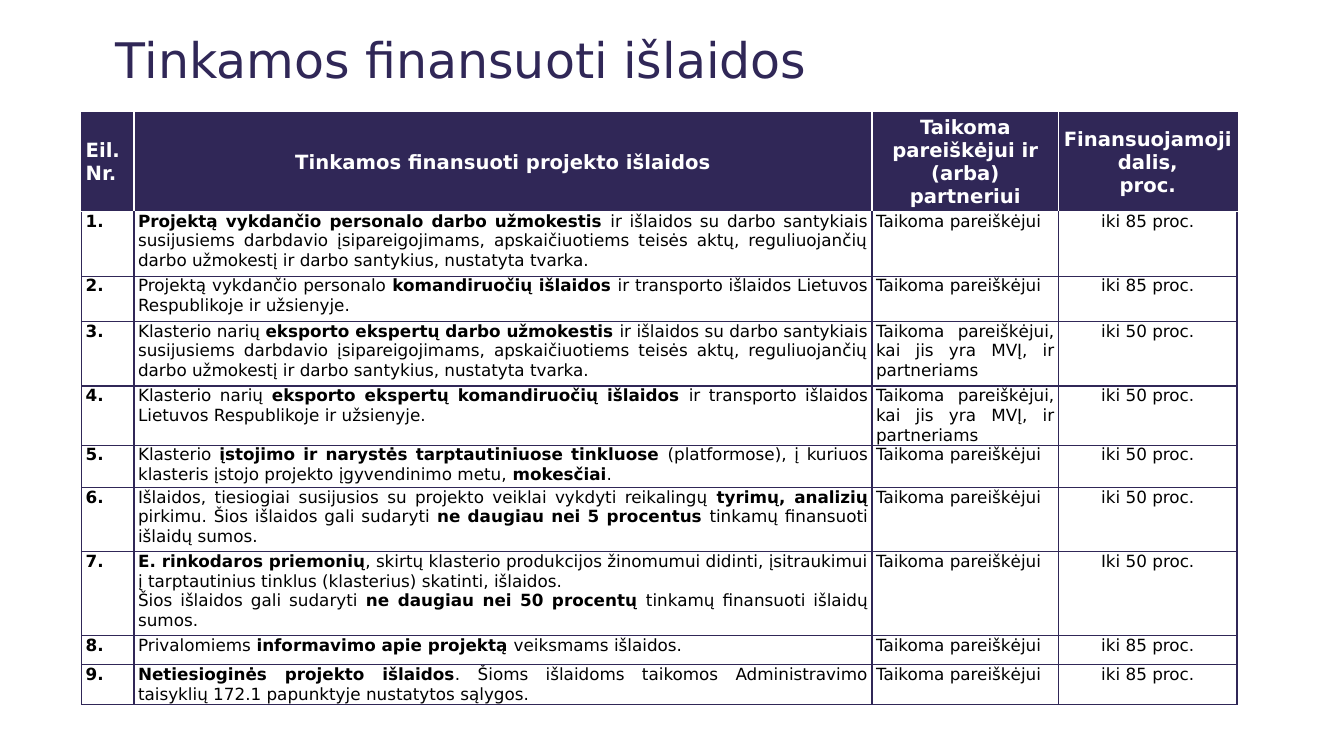
import pptx
import pptx.dml.color
import pptx.enum.text
import pptx.oxml
import pptx.oxml.ns
import pptx.util
from pptx.util import Inches

ALIGN = pptx.enum.text.PP_ALIGN
ANCHOR = pptx.enum.text.MSO_ANCHOR
NAVY, WHITE, BLACK = "302757", "FFFFFF", "000000"


def rgb(value):
    return pptx.dml.color.RGBColor.from_string(value)


class SlideBuilder:
    font = "DejaVu Sans"

    def __init__(self, prs):
        self.s = prs.slides.add_slide(prs.slide_layouts[0])
        sp = self.s.placeholders[1]
        sp.element.getparent().remove(sp.element)

    def add_text(self, tf, text, size, color, align, bold=False):
        for i, line in enumerate(text.split("\n")):
            p = tf.paragraphs[0] if i == 0 else tf.add_paragraph()
            p.alignment = align
            for j, part in enumerate(line.split("*")):
                if part:
                    r = p.add_run()
                    r.text = part
                    r.font.name = self.font
                    r.font.size = pptx.util.Pt(size)
                    r.font.bold = bold or j % 2 == 1
                    r.font.color.rgb = rgb(color)

    def title(self, text, x, y, w, h):
        sp = self.s.shapes.title
        sp.left, sp.top, sp.width, sp.height = map(Inches, (x, y, w, h))
        tf = sp.text_frame
        tf.word_wrap = True
        tf.auto_size = pptx.enum.text.MSO_AUTO_SIZE.NONE
        tf.vertical_anchor = ANCHOR.BOTTOM
        self.add_text(tf, text, 35, NAVY, ALIGN.LEFT)

    def borders(self, cell, **colors):
        tcPr = cell._tc.get_or_add_tcPr()
        for i, side in enumerate("LRTB"):
            ln = pptx.oxml.parse_xml(
                f'<a:ln{side} {pptx.oxml.ns.nsdecls("a")} w="12700"><a:solidFill>'
                f'<a:srgbClr val="{colors[side]}"/></a:solidFill></a:ln{side}>')
            tcPr.insert(i, ln)

    def cell(self, cell, text, row, col, last_col):
        header = row == 0
        cell.margin_left = cell.margin_right = Inches(0.04)
        cell.margin_top = cell.margin_bottom = 0
        cell.vertical_anchor = ANCHOR.MIDDLE if header else ANCHOR.TOP
        inner = WHITE if header else NAVY
        if header:
            cell.fill.solid()
            cell.fill.fore_color.rgb = rgb(NAVY)
        else:
            cell.fill.background()
        self.borders(cell,
                     L=NAVY if col == 0 else inner,
                     R=NAVY if col == last_col else inner,
                     T=WHITE if row == 1 else NAVY,
                     B=inner)
        centred = col == last_col or (header and col > 0)
        self.add_text(cell.text_frame, text, 14 if header else 12,
                      WHITE if header else BLACK,
                      ALIGN.CENTER if centred else ALIGN.JUSTIFY,
                      header or col == 0)

    def table(self, rows, x, y, widths, heights):
        tbl = self.s.shapes.add_table(
            len(rows), len(widths), Inches(x), Inches(y),
            Inches(sum(widths)), Inches(sum(heights))).table
        tbl.first_row = tbl.horz_banding = False
        for col, w in zip(tbl.columns, widths):
            col.width = Inches(w)
        for row, h in zip(tbl.rows, heights):
            row.height = Inches(h)
        for i, values in enumerate(rows):
            for j, text in enumerate(values):
                self.cell(tbl.cell(i, j), text, i, j, len(widths) - 1)


APPLICANT = "Taikoma pareiškėjui"
PARTNERS = "Taikoma pareiškėjui, kai jis yra MVĮ, ir partneriams"
WAGE_TAIL = ("ir išlaidos su darbo santykiais susijusiems darbdavio įsipareigojimams, "
             "apskaičiuotiems teisės aktų, reguliuojančių darbo užmokestį ir darbo "
             "santykius, nustatyta tvarka.")
TRAVEL_TAIL = "ir transporto išlaidos Lietuvos Respublikoje ir užsienyje."

HEADER = ("Eil.\nNr.", "Tinkamos finansuoti projekto išlaidos",
          "Taikoma pareiškėjui ir (arba) partneriui",
          "Finansuojamoji dalis,\nproc.")
EXPENSES = [
    ("*Projektą vykdančio personalo darbo užmokestis *" + WAGE_TAIL,
     APPLICANT, "iki 85 proc."),
    ("Projektą vykdančio personalo *komandiruočių išlaidos *" + TRAVEL_TAIL,
     APPLICANT, "iki 85 proc."),
    ("Klasterio narių *eksporto ekspertų darbo užmokestis *" + WAGE_TAIL,
     PARTNERS, "iki 50 proc."),
    ("Klasterio narių *eksporto ekspertų komandiruočių išlaidos *" + TRAVEL_TAIL,
     PARTNERS, "iki 50 proc."),
    ("Klasterio *įstojimo ir narystės tarptautiniuose tinkluose *(platformose), "
     "į kuriuos klasteris įstojo projekto įgyvendinimo metu, *mokesčiai*.",
     APPLICANT, "iki 50 proc."),
    ("Išlaidos, tiesiogiai susijusios su projekto veiklai vykdyti reikalingų "
     "*tyrimų, analizių *pirkimu. Šios išlaidos gali sudaryti "
     "*ne daugiau nei 5 procentus *tinkamų finansuoti išlaidų sumos.",
     APPLICANT, "iki 50 proc."),
    ("*E. rinkodaros priemonių*, skirtų klasterio produkcijos žinomumui didinti, "
     "įsitraukimui į tarptautinius tinklus (klasterius) skatinti, išlaidos.\n"
     "Šios išlaidos gali sudaryti *ne daugiau nei 50 procentų *"
     "tinkamų finansuoti išlaidų sumos.",
     APPLICANT, "Iki 50 proc."),
    ("Privalomiems *informavimo apie projektą *veiksmams išlaidos.",
     APPLICANT, "iki 85 proc."),
    ("*Netiesioginės projekto išlaidos*. Šioms išlaidoms taikomos Administravimo "
     "taisyklių 172.1 papunktyje nustatytos sąlygos.",
     APPLICANT, "iki 85 proc."),
]


def main():
    prs = pptx.Presentation()
    prs.slide_width, prs.slide_height = Inches(13.33), Inches(7.5)
    slide = SlideBuilder(prs)
    slide.title("Tinkamos finansuoti išlaidos", 1.05, 0.11, 7.44, 0.82)
    rows = [HEADER] + [(f"{n}.", *row) for n, row in enumerate(EXPENSES, 1)]
    slide.table(rows, 0.81, 1.12, (0.52, 7.32, 1.85, 1.77),
                (0.98, 0.64, 0.45, 0.64, 0.58, 0.42, 0.64, 0.83, 0.29, 0.39))
    prs.save("out.pptx")


if __name__ == "__main__":
    main()
